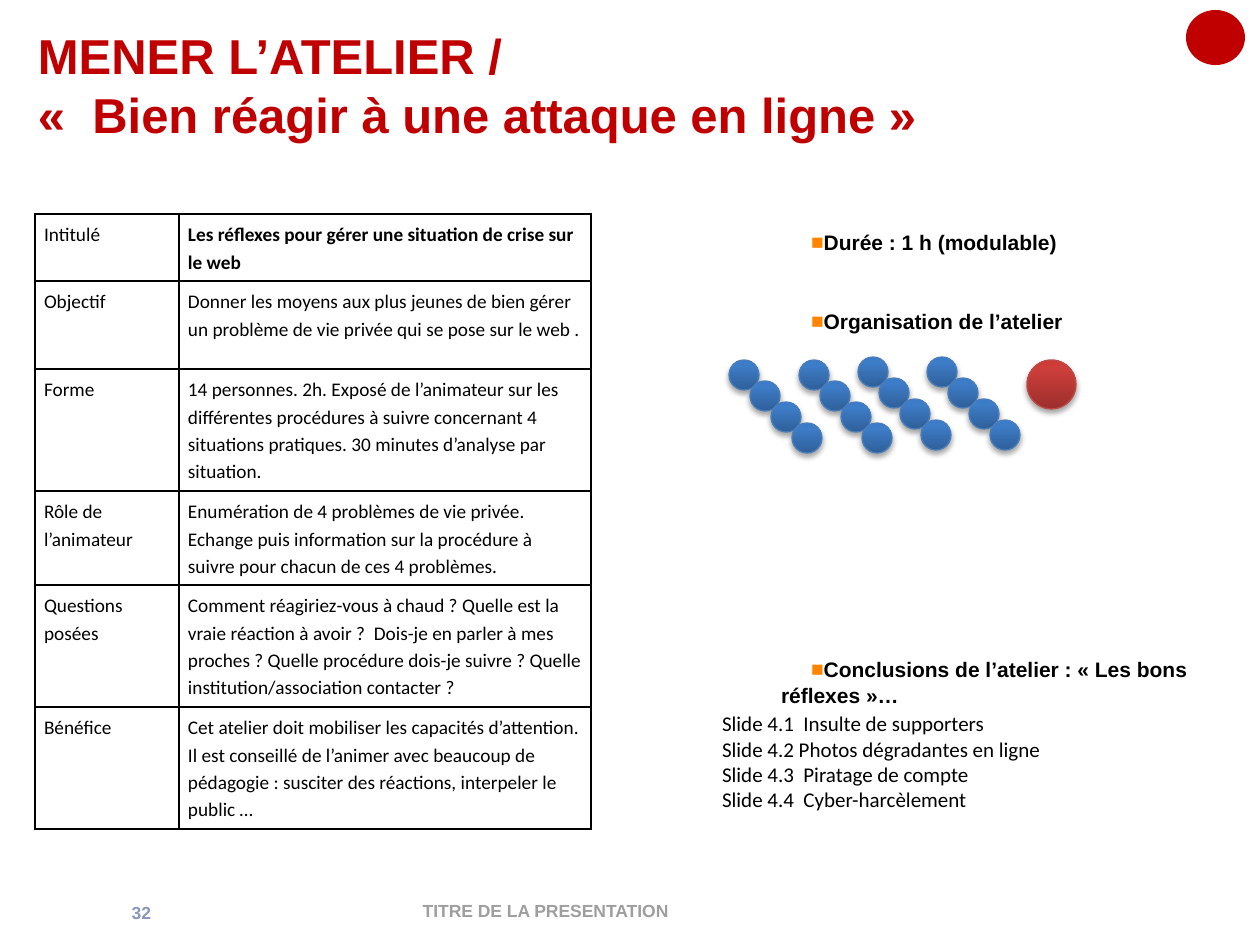
from lxml.etree import SubElement
from pptx import Presentation
from pptx.dml.color import RGBColor
from pptx.enum.shapes import MSO_SHAPE
from pptx.enum.text import MSO_ANCHOR, MSO_AUTO_SIZE, PP_ALIGN
from pptx.oxml.ns import qn
from pptx.util import Pt

# Content
TITLE = ["MENER L’ATELIER /", "«  Bien réagir à une attaque en ligne »"]
FOOTER = "TITRE DE LA PRESENTATION"
PAGE_NUMBER = "32"
WORKSHOP = [  # label, description, row height in px
    ("Intitulé", "Les réflexes pour gérer une situation de crise sur le web", 67),
    ("Objectif", "Donner les moyens aux plus jeunes de bien gérer un problème de vie privée "
     "qui se pose sur le web .", 88),
    ("Forme", "14 personnes. 2h. Exposé de l’animateur sur les différentes procédures à suivre "
     "concernant 4 situations pratiques. 30 minutes d’analyse par situation.", 122),
    ("Rôle de l’animateur", "Enumération de 4 problèmes de vie privée. Echange puis information "
     "sur la procédure à suivre pour chacun de ces 4 problèmes.", 94),
    ("Questions posées", "Comment réagiriez-vous à chaud ? Quelle est la vraie réaction à avoir ?  "
     "Dois-je en parler à mes proches ? Quelle procédure dois-je suivre ? "
     "Quelle institution/association contacter ?", 122),
    ("Bénéfice", "Cet atelier doit mobiliser les capacités d’attention. Il est conseillé de "
     "l’animer avec beaucoup de pédagogie : susciter des réactions, interpeler le public …", 122),
]
ORGANISATION = ["Durée : 1 h (modulable)", "Organisation de l’atelier"]
CONCLUSION = "Conclusions de l’atelier : « Les bons réflexes »…"
SITUATIONS = [
    "Slide 4.1  Insulte de supporters",
    "Slide 4.2 Photos dégradantes en ligne",
    "Slide 4.3  Piratage de compte",
    "Slide 4.4  Cyber-harcèlement",
]

# Places in px
COLUMN_WIDTHS = (144, 412)
SEAT_ROWS = [(729, 360), (799, 360), (858, 357), (927, 357)]
SEATS_PER_ROW, SEAT_STEP, SEAT_SIZE = 4, 21, 30

NO_BREAK_SPACE = chr(160)


class Theme:
    red, black, orange = "C00000", "000000", "FF8400"
    footer, number = "9E9E9E", "8B96BC"
    seat = ([(0, "2F5F99"), (80, "3D7CC7"), (100, "3A7CCB")], "4A7EBB")
    host = ([(0, "9C2F2D"), (80, "CB3E3A"), (100, "CE3B37")], "BE4B48")
    heading_font, body_font = "Arial", "Calibri"
    title_size, note_size, cell_size, footer_size = 28, 12, 11, 10


def px(n):
    return round(n * 914400 / 126)


def box(*lengths):
    return [px(n) for n in lengths]


def french_spacing(text):
    """Keep question marks and guillemets on the line of their word."""
    for pair in (" ?", " »", "« "):
        text = text.replace(pair, pair.replace(" ", NO_BREAK_SPACE))
    return text


def add_run(paragraph, text, size, color, font=Theme.heading_font, bold=True):
    run = paragraph.add_run()
    run.text = french_spacing(text)
    run.font.size, run.font.name, run.font.bold = Pt(size), font, bold
    run.font.color.rgb = RGBColor.from_string(color)


def paragraph_at(frame, index):
    return frame.paragraphs[0] if index == 0 else frame.add_paragraph()


def set_frame(frame, anchor, top_inset=6):
    frame.word_wrap = True
    frame.auto_size = MSO_AUTO_SIZE.NONE
    frame.vertical_anchor = anchor
    frame.margin_left = frame.margin_right = px(13)
    frame.margin_top, frame.margin_bottom = px(top_inset), px(6)
    return frame


def add_color(parent, color):
    return SubElement(parent, qn("a:srgbClr"), val=color)


def add_bullet_line(paragraph, text):
    paragraph.level = 1
    properties = paragraph._p.get_or_add_pPr()
    properties.set("marL", str(px(59)))
    properties.set("indent", str(px(30)))
    paragraph.space_after = Pt(2)
    add_color(SubElement(properties, qn("a:buClr")), Theme.orange)
    SubElement(properties, qn("a:buFont"), typeface=Theme.heading_font)
    SubElement(properties, qn("a:buChar"), char="■")
    add_run(paragraph, text, Theme.note_size, Theme.black)


def add_circle(slide, *place):
    circle = slide.shapes.add_shape(MSO_SHAPE.OVAL, *box(*place))
    circle.shadow.inherit = False
    return circle


def add_person(slide, x, y, size, colors):
    stops, outline = colors
    person = add_circle(slide, x, y, size, size)
    person.fill.gradient()
    person.fill.gradient_angle = 90
    properties = person._element.spPr
    stop_list = properties.find(".//" + qn("a:gsLst"))
    for stop in list(stop_list):
        stop_list.remove(stop)
    for percent, color in stops:
        add_color(SubElement(stop_list, qn("a:gs"), pos=str(percent * 1000)), color)
    person.line.color.rgb = RGBColor.from_string(outline)
    person.line.width = Pt(0.75)
    shadow = SubElement(properties.find(qn("a:effectLst")), qn("a:outerShdw"),
                        blurRad=str(Pt(3.1)), dist=str(Pt(1.8)), dir="5400000", rotWithShape="0")
    SubElement(add_color(shadow, Theme.black), qn("a:alpha"), val="35000")


def fill_cell(cell, text, bold):
    cell.margin_left = cell.margin_right = px(9)
    cell.margin_top = cell.margin_bottom = px(6)
    paragraph = cell.text_frame.paragraphs[0]
    paragraph.line_spacing = 1.15
    add_run(paragraph, text, Theme.cell_size, Theme.black, Theme.body_font, bold)
    properties = cell._tc.get_or_add_tcPr()
    for side in ("lnL", "lnR", "lnT", "lnB"):
        border = SubElement(properties, qn("a:" + side), w=str(Pt(0.96)))
        add_color(SubElement(border, qn("a:solidFill")), Theme.black)
    cell.fill.background()


def main():
    deck = Presentation()
    deck.slide_width, deck.slide_height = box(1260, 945)
    slide = deck.slides.add_slide(deck.slide_layouts[5])

    # Title
    title = slide.shapes.title
    title.left, title.top, title.width, title.height = box(25, 44, 1329, 79)
    title_frame = set_frame(title.text_frame, MSO_ANCHOR.MIDDLE, top_inset=8)
    for i, line in enumerate(TITLE):
        paragraph = paragraph_at(title_frame, i)
        paragraph.alignment = PP_ALIGN.LEFT
        paragraph.space_before = Pt(0)
        add_run(paragraph, line, Theme.title_size, Theme.red)

    # Footer and page number
    for text, place, align, color in [
        (FOOTER, (184, 889, 723, 43), PP_ALIGN.CENTER, Theme.footer),
        (PAGE_NUMBER, (54, 893, 110, 39), PP_ALIGN.RIGHT, Theme.number),
    ]:
        frame = set_frame(slide.shapes.add_textbox(*box(*place)).text_frame, MSO_ANCHOR.MIDDLE)
        frame.paragraphs[0].alignment = align
        add_run(frame.paragraphs[0], text, Theme.footer_size, color)

    # Duration and organisation
    organisation = slide.shapes.add_textbox(*box(709, 178, 407, 86))
    organisation_frame = set_frame(organisation.text_frame, MSO_ANCHOR.TOP, top_inset=52)
    for i, line in enumerate(ORGANISATION):
        paragraph = paragraph_at(organisation_frame, i)
        paragraph.space_before = Pt(28.5 * i)
        add_bullet_line(paragraph, line)

    # Conclusions and situations
    conclusions = slide.shapes.add_textbox(*box(709, 605, 545, 86))
    conclusions_frame = set_frame(conclusions.text_frame, MSO_ANCHOR.TOP, top_inset=52)
    add_bullet_line(conclusions_frame.paragraphs[0], CONCLUSION)
    for situation in SITUATIONS:
        add_run(conclusions_frame.add_paragraph(), situation, Theme.note_size, Theme.black,
                Theme.body_font, False)

    # Seating plan: diagonal rows of participants, then the host
    for x, y in SEAT_ROWS:
        for seat in range(SEATS_PER_ROW):
            offset = seat * SEAT_STEP
            add_person(slide, x + offset, y + offset, SEAT_SIZE, Theme.seat)
    add_person(slide, 1027, 360, 49, Theme.host)

    # Workshop table
    table_height = sum(height for _, _, height in WORKSHOP)
    workshop = slide.shapes.add_table(
        len(WORKSHOP), 2, *box(35, 214, sum(COLUMN_WIDTHS), table_height)).table
    workshop.first_row = workshop.horz_banding = False
    for column, width in zip(workshop.columns, COLUMN_WIDTHS):
        column.width = px(width)
    for i, (label, description, height) in enumerate(WORKSHOP):
        workshop.rows[i].height = px(height)
        fill_cell(workshop.cell(i, 0), label, False)
        fill_cell(workshop.cell(i, 1), description, i == 0)

    # Corner disc
    corner = add_circle(slide, 1186, 10, 59, 55)
    corner.fill.solid()
    corner.fill.fore_color.rgb = RGBColor.from_string(Theme.red)
    corner.line.fill.background()

    deck.save("out.pptx")


if __name__ == "__main__":
    main()
